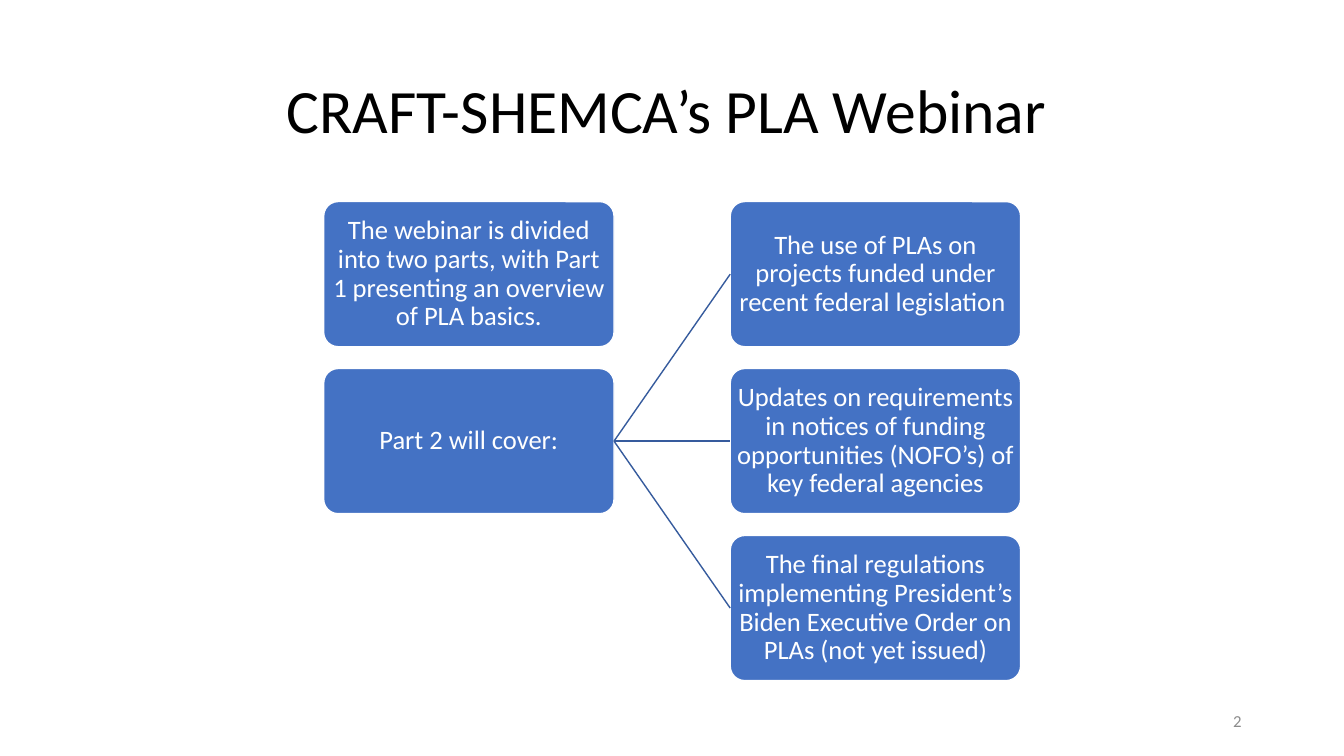
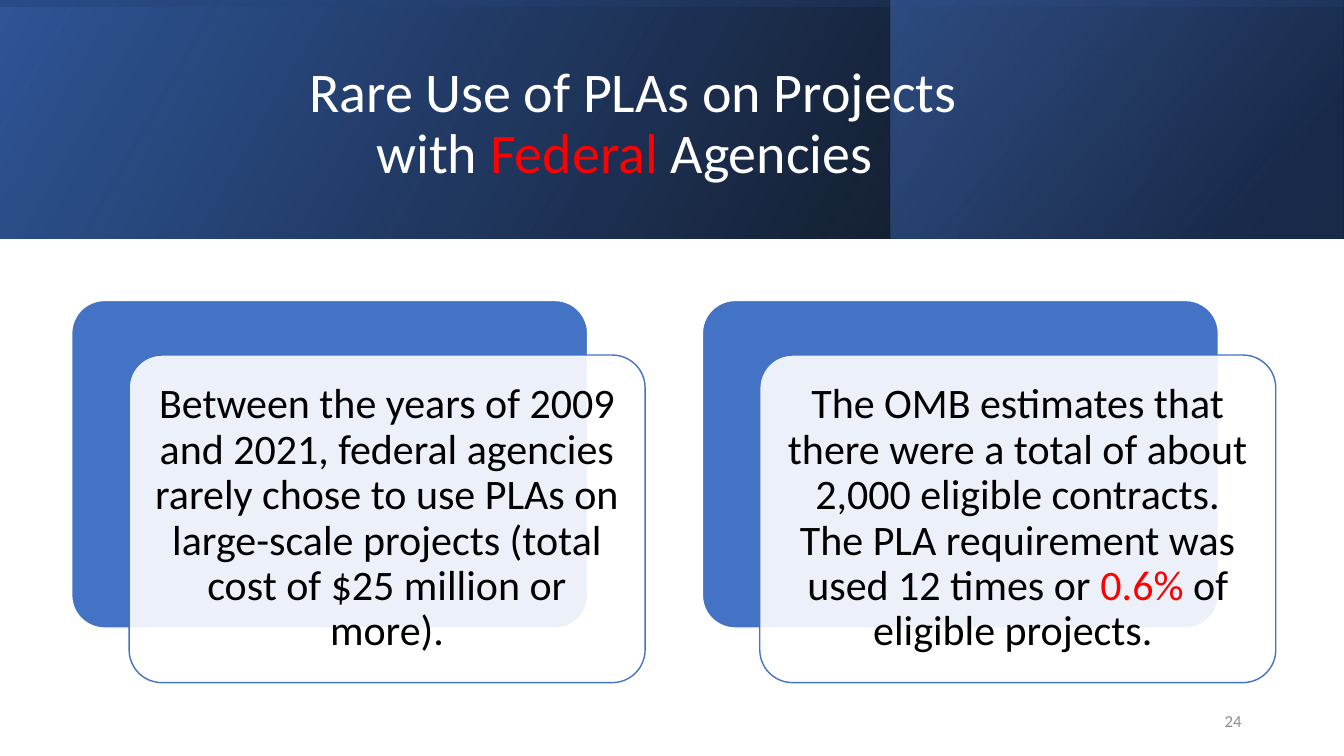
"""Build two slides on project labor agreements."""
import dataclasses

import lxml.etree
import pptx
import pptx.dml.color
import pptx.enum.shapes
import pptx.enum.text
import pptx.oxml.ns
import pptx.util

Pt = pptx.util.Pt
SHAPE = pptx.enum.shapes.MSO_SHAPE
ALIGN = pptx.enum.text.PP_ALIGN
qn = pptx.oxml.ns.qn


@dataclasses.dataclass(frozen=True)
class Theme:
    """Colours and type sizes shared by the slides."""
    font: str = "Calibri"
    black: str = "000000"
    white: str = "FFFFFF"
    red: str = "FF0000"
    blue: str = "4472C4"
    link: str = "365B9D"
    deep: str = "2F5597"
    navy: str = "203864"
    grey: str = "8C8C8C"
    title: int = 44
    band_title: int = 40
    card: int = 30
    box: int = 19
    number: int = 12


THEME = Theme()


def rgb(color):
    """Return a colour object for a hex string."""
    return pptx.dml.color.RGBColor.from_string(color)


def write_text(tf, paragraphs, *, size, color, align=ALIGN.CENTER, inset=None,
               spacing=0.9, indents=()):
    """Fill a text frame; a run is a string or a (string, colour) pair."""
    tf.word_wrap = True
    tf.auto_size = pptx.enum.text.MSO_AUTO_SIZE.NONE
    tf.vertical_anchor = pptx.enum.text.MSO_ANCHOR.MIDDLE
    if inset is not None:
        tf.margin_left = tf.margin_right = Pt(inset)
        tf.margin_top = tf.margin_bottom = Pt(inset)
    for i, runs in enumerate(paragraphs):
        p = tf.add_paragraph() if i else tf.paragraphs[0]
        p.alignment = align
        p.line_spacing = spacing
        if indents:
            p._p.get_or_add_pPr().set("marL", str(Pt(indents[i])))
        for run in runs:
            text, run_color = (run, color) if isinstance(run, str) else run
            r = p.add_run()
            r.text = text
            r.font.name = THEME.font
            r.font.size = Pt(size)
            r.font.color.rgb = rgb(run_color)


def set_alphas(sp, alphas):
    """Set the opacity, in percent, of each colour in a shape's fill."""
    colors = sp._element.spPr.iter(qn("a:srgbClr"))
    for color, alpha in zip(colors, alphas):
        lxml.etree.SubElement(color, qn("a:alpha")).set("val", str(alpha * 1000))


def add_box(s, left, top, width, height, fill, line):
    """Add a rounded box with a thin outline."""
    sp = s.shapes.add_shape(SHAPE.ROUNDED_RECTANGLE, Pt(left), Pt(top),
                            Pt(width), Pt(height))
    sp.adjustments[0] = 0.1
    sp.shadow.inherit = False
    sp.fill.solid()
    sp.fill.fore_color.rgb = rgb(fill)
    sp.line.color.rgb = rgb(line)
    sp.line.width = Pt(1)
    return sp


def add_gradient(s, left, top, width, height, stops, angle, rotation=0):
    """Add a mirrored rectangle; a stop is (position, colour, opacity)."""
    sp = s.shapes.add_shape(SHAPE.RECTANGLE, Pt(left), Pt(top),
                            Pt(width), Pt(height))
    sp.rotation = rotation
    sp._element.spPr.find(qn("a:xfrm")).set("flipH", "1")
    sp.shadow.inherit = False
    sp.fill.gradient()
    sp.fill.gradient_angle = angle
    for stop, (position, color, _) in zip(sp.fill.gradient_stops, stops):
        stop.position = position / 100
        stop.color.rgb = rgb(color)
    set_alphas(sp, [alpha for _, _, alpha in stops])
    sp.line.fill.background()


def add_link(s, start, end):
    """Join the right side of one box to the left side of another."""
    line = s.shapes.add_connector(pptx.enum.shapes.MSO_CONNECTOR.STRAIGHT,
                                  0, 0, 0, 0)
    line.begin_connect(start, 3)
    line.end_connect(end, 1)
    line.line.color.rgb = rgb(THEME.link)
    line.line.width = Pt(1)
    lxml.etree.SubElement(line._element.spPr, qn("a:effectLst"))


def set_title(s, paragraphs, left, top, width, height, **text_format):
    """Place and fill the title, in front of what is already drawn."""
    title = s.shapes.title
    title.left, title.top = Pt(left), Pt(top)
    title.width, title.height = Pt(width), Pt(height)
    write_text(title.text_frame, paragraphs, align=ALIGN.LEFT, **text_format)
    s.shapes._spTree.append(title._element)


def add_number(s, number):
    """Add the slide number at the bottom right."""
    sp = s.shapes.add_textbox(Pt(678), Pt(500.5), Pt(216), Pt(28.75))
    write_text(sp.text_frame, [[number]], size=THEME.number,
               color=THEME.grey, align=ALIGN.RIGHT, spacing=1.0)


def add_column(s, texts, left):
    """Stack text boxes at equal gaps and return them."""
    top, width, height, gap = 144, 207.4, 103.7, 15.55
    boxes = []
    for i, text in enumerate(texts):
        sp = add_box(s, left, top + i * (height + gap), width, height,
                     THEME.blue, THEME.white)
        write_text(sp.text_frame, [[text]], size=THEME.box,
                   color=THEME.white, inset=0.9)
        boxes.append(sp)
    return boxes


def add_card(s, runs, left):
    """Add a see-through card offset over a blue backing."""
    top, width, height = 214.6, 368.6, 234
    add_box(s, left, top, width, height, THEME.blue, THEME.white)
    sp = add_box(s, left + 41, top + 39, width, height, THEME.white, THEME.blue)
    set_alphas(sp, [90])
    write_text(sp.text_frame, [runs], size=THEME.card, color=THEME.black,
               inset=8.4)


def add_band(s):
    """Layer the gradients of the title band."""
    width, height = 960, 170.6
    add_gradient(s, 0, 0, width, height,
                 [(0, THEME.black, 96), (100, THEME.deep, 100)], 30)
    add_gradient(s, 636.5, 0, 322.9, height,
                 [(19, THEME.navy, 68), (100, THEME.blue, 48)], 40)
    add_gradient(s, (width - height) / 2, (height - width) / 2, height, width,
                 [(23, THEME.deep, 16), (99, THEME.black, 45)], 10, 270)


def build_outline(s):
    """Build the slide on the two parts of the webinar."""
    set_title(s, [["CRAFT-SHEMCA’s PLA Webinar"]], 66, 28.8, 828, 104.4,
              size=THEME.title, color=THEME.black, indents=[131.5])
    parts = add_column(s, [
        "The webinar is divided into two parts, with Part 1 presenting "
        "an overview of PLA basics.",
        "Part 2 will cover:",
    ], 231.2)
    topics = add_column(s, [
        "The use of PLAs on projects funded under recent federal legislation ",
        "Updates on requirements in notices of funding opportunities "
        "(NOFO’s) of key federal agencies",
        "The final regulations implementing President’s Biden Executive "
        "Order on PLAs (not yet issued)",
    ], 521.6)
    for topic in topics:
        add_link(s, parts[-1], topic)
    add_number(s, "2")


def build_usage(s):
    """Build the slide on how rarely agencies used the agreements."""
    add_band(s)
    set_title(s, [["Rare Use of PLAs on Projects"],
                  ["with ", ("Federal", THEME.red), " Agencies"]],
              108.7, 27.4, 765.4, 123.8, size=THEME.band_title,
              color=THEME.white, indents=[105, 153])
    cards = [
        ["Between the years of 2009 and 2021, federal agencies rarely chose "
         "to use PLAs on large-scale projects (total cost of $25 million "
         "or more)."],
        ["The OMB estimates that there were a total of about 2,000 eligible "
         "contracts. The PLA requirement was used 12 times or ",
         ("0.6% ", THEME.red), "of eligible projects. "],
    ]
    for i, runs in enumerate(cards):
        add_card(s, runs, 51.2 + i * 450.5)
    add_number(s, "24")


def main():
    """Build and save the presentation."""
    prs = pptx.Presentation()
    prs.slide_width, prs.slide_height = Pt(960), Pt(540)
    for build in (build_outline, build_usage):
        build(prs.slides.add_slide(prs.slide_layouts[5]))
    prs.save("out.pptx")


if __name__ == "__main__":
    main()
